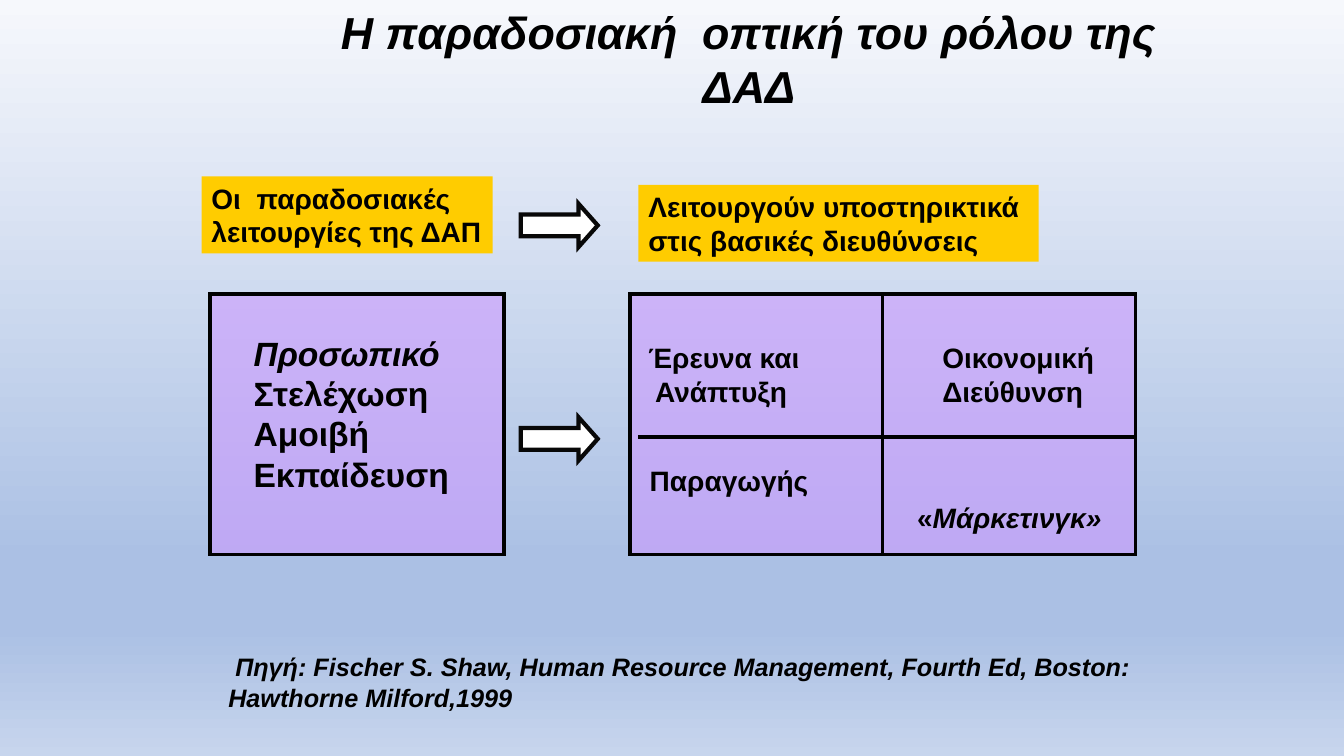
from lxml.etree import SubElement as Sub
from pptx import Presentation
from pptx.dml.color import RGBColor as Rgb
from pptx.enum.shapes import MSO_CONNECTOR as Conn, MSO_SHAPE as Kind
from pptx.enum.text import MSO_ANCHOR as Anchor, PP_ALIGN as Align
from pptx.oxml.ns import qn
from pptx.util import Pt

INK = {"text": "000000", "edge": "080808", "panel": "CC99FF",
       "label": "FFCC00", "arrow": "FFFFFF"}
SKY = [(0, "F6F8FC"), (74, "ABC0E4"), (83, "ABC0E4"), (100, "C7D5ED")]
FONT = "Arial"

TITLE = [[("Η παραδοσιακή  οπτική του ρόλου της ΔΑΔ", True)]]
SOURCE = [[(" ", False),
           ("Πηγή: Fischer S. Shaw, Human Resource Management, Fourth Ed, Boston:", True)],
          [("Hawthorne Milford,1999", True)]]
STAFF = [[("Προσωπικό", True)], [("Στελέχωση", False)],
         [("Αμοιβή", False)], [("Εκπαίδευση", False)]]
LABELS = [
    (144, 126, 208, [[("Οι  παραδοσιακές", False)], [("λειτουργίες της ΔΑΠ", False)]]),
    (456, 132, 286, [[("Λειτουργούν υποστηρικτικά", False)],
                     [("στις βασικές διευθύνσεις", False)]]),
]
UNITS = [
    (456, 240, 130, 55, Anchor.TOP, [[("Έρευνα και", False)], [(" Ανάπτυξη", False)]]),
    (666, 240, 130, 55, Anchor.TOP, [[("Οικονομική", False)], [("Διεύθυνση", False)]]),
    (457, 327.5, 140, 31, Anchor.TOP, [[("Παραγωγής", False)]]),
    (648, 330, 150, 55, Anchor.BOTTOM, [[("«", False), ("Μάρκετινγκ»", True)]]),
]
TOP, HIGH = 210, 186
LEFT, RIGHT = (150, 210), (450, 361)
MID = 312.2

prs = Presentation()
prs.slide_width, prs.slide_height = Pt(960), Pt(540)
slide = prs.slides.add_slide(prs.slide_layouts[6])
shapes = slide.shapes


def paint_sky():
    fill = slide.background.fill
    fill.gradient()
    fill.gradient_angle = 270
    stops = slide.element.find(".//" + qn("a:gsLst"))
    for old in list(stops):
        stops.remove(old)
    for pos, hue in SKY:
        stop = Sub(stops, qn("a:gs"), pos=str(pos * 1000))
        Sub(stop, qn("a:srgbClr"), val=hue)


def write(shape, paras, size, wrap=False, align=Align.LEFT, anchor=Anchor.TOP):
    frame = shape.text_frame
    frame.word_wrap, frame.vertical_anchor = wrap, anchor
    for i, parts in enumerate(paras):
        para = frame.add_paragraph() if i else frame.paragraphs[0]
        para.alignment = align
        for words, slant in parts:
            run = para.add_run()
            run.text = words
            font = run.font
            font.name, font.size = FONT, Pt(size)
            font.bold, font.italic = True, slant
            font.color.rgb = Rgb.from_string(INK["text"])


def add_text(x, y, w, h, paras, size, **opts):
    write(shapes.add_textbox(Pt(x), Pt(y), Pt(w), Pt(h)), paras, size, **opts)


def add_box(kind, x, y, w, h, fill, edge=None, width=0):
    box = shapes.add_shape(kind, Pt(x), Pt(y), Pt(w), Pt(h))
    box.shadow.inherit = False
    box.fill.solid()
    box.fill.fore_color.rgb = Rgb.from_string(INK[fill])
    if edge:
        box.line.color.rgb = Rgb.from_string(INK[edge])
        box.line.width = Pt(width)
        Sub(box.element.spPr.find(qn("a:ln")), qn("a:miter"), lim="800000")
    else:
        box.line.fill.background()
    return box


def add_panel(x, w):
    box = add_box(Kind.RECTANGLE, x, TOP, w, HIGH, "panel", "text", 2.5)
    hue = box.element.spPr.find(qn("a:solidFill"))[0]
    Sub(hue, qn("a:alpha"), val="59000")
    return box


def add_rule(x1, y1, x2, y2):
    rule = shapes.add_connector(Conn.STRAIGHT, Pt(x1), Pt(y1), Pt(x2), Pt(y2))
    rule.line.color.rgb = Rgb.from_string(INK["text"])
    rule.line.width = Pt(2.5)
    Sub(rule.element.spPr, qn("a:effectLst"))
    return rule


paint_sky()
add_panel(*LEFT)
grid = add_panel(*RIGHT)
x, w = RIGHT
split = add_rule(x + w / 2, TOP, x + w / 2, TOP + HIGH)
split.begin_connect(grid, 0)
split.end_connect(grid, 2)
add_rule(x + w, MID, x + 6, MID)

for x, y, w, h, hold, paras in UNITS:
    add_text(x, y, w, h, paras, 20, anchor=hold)
add_text(174, 234, 165, 124, STAFF, 24)
add_text(227, 0, 616, 84, TITLE, 32, wrap=True, align=Align.CENTER)
add_text(156, 462, 665, 50, SOURCE, 18)

for x, y, w, paras in LABELS:
    write(add_box(Kind.RECTANGLE, x, y, w, 55, "label"), paras, 20)
for y in (145.5, 298):
    arrow = add_box(Kind.RIGHT_ARROW, 372, y, 55, 31, "arrow", "edge", 3)
    arrow.adjustments[0], arrow.adjustments[1] = 0.5, 0.443

prs.save("out.pptx")
